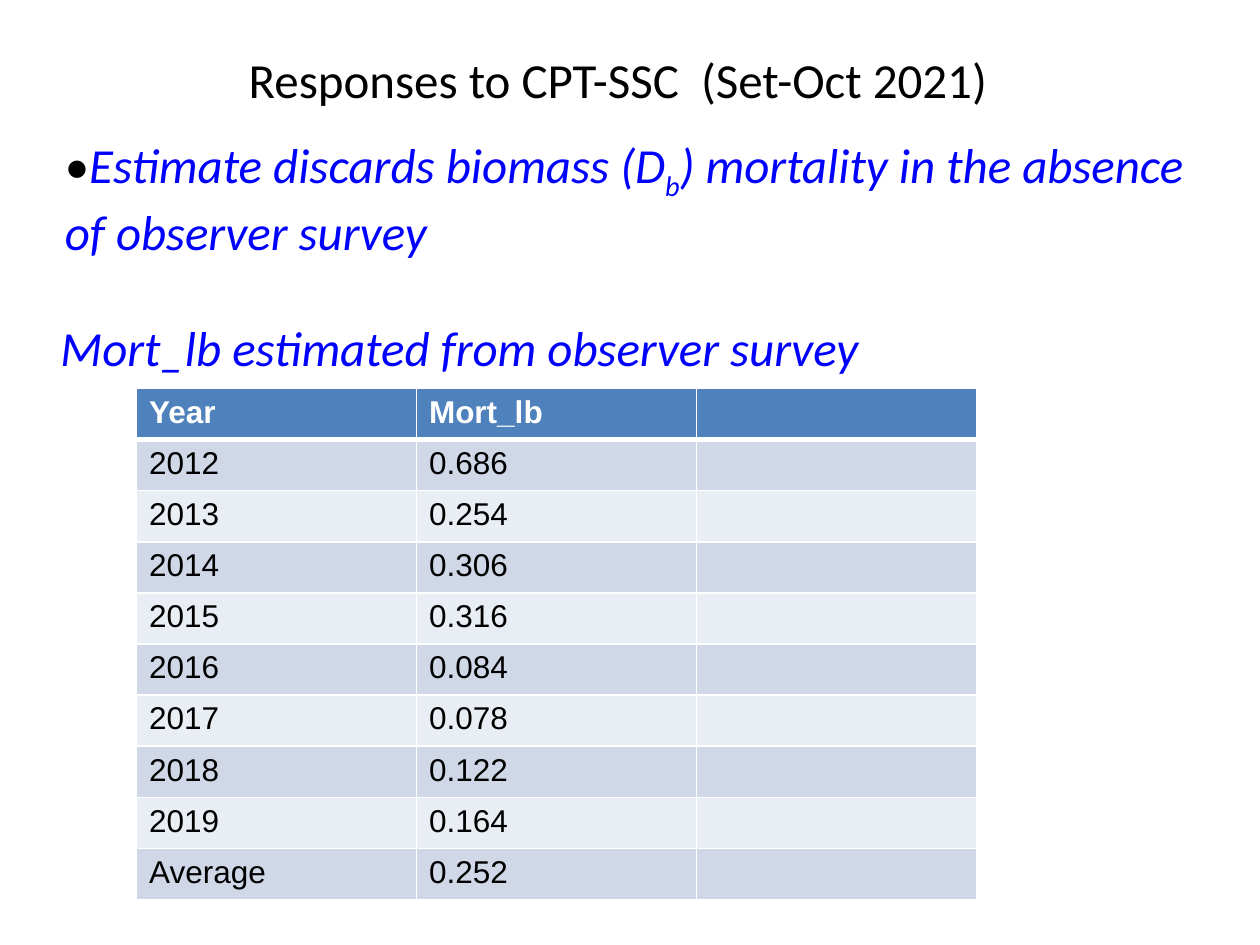
from lxml import etree
from pptx import Presentation
from pptx.dml.color import RGBColor
from pptx.enum import text
from pptx.oxml.ns import qn
from pptx.util import Pt

BLACK, WHITE, BLUE = "000000", "FFFFFF", "0000FF"
HEADER, BANDS = "4F81BD", ("D0D8E8", "E9EDF4")
ROWS = [
    ("Year", "Mort_lb", ""),
    ("2012", "0.686", ""),
    ("2013", "0.254", ""),
    ("2014", "0.306", ""),
    ("2015", "0.316", ""),
    ("2016", "0.084", ""),
    ("2017", "0.078", ""),
    ("2018", "0.122", ""),
    ("2019", "0.164", ""),
    ("Average", "0.252", ""),
]


def colour(value):
    return RGBColor.from_string(value)


def add_span(para, words, hue, size=28, face="Calibri", italic=False, bold=False):
    span = para.add_run()
    span.text = words
    font = span.font
    font.name, font.size = face, Pt(size)
    font.italic, font.bold = italic, bold
    font.color.rgb = colour(hue)
    return span


def add_title(page, box, words):
    title = page.shapes.title
    title.left, title.top, title.width, title.height = map(Pt, box)
    frame = title.text_frame
    frame.vertical_anchor = text.MSO_ANCHOR.MIDDLE
    para = frame.paragraphs[0]
    para.alignment = text.PP_ALIGN.CENTER
    add_span(para, words, BLACK)


def add_statement(page, box):
    """Add an empty wrapped text box and return its paragraph."""
    frame = page.shapes.add_textbox(*map(Pt, box)).text_frame
    frame.word_wrap = True
    para = frame.paragraphs[0]
    para.space_before = Pt(5.6)
    return para


def add_request(page, box):
    para = add_statement(page, box)
    add_span(para, "•", BLACK)
    add_span(para, "Estimate discards biomass (D", BLUE, italic=True)
    subscript = add_span(para, "b", BLUE, italic=True)
    subscript.font._element.set("baseline", "-25000")
    add_span(para, ") mortality in the absence of observer survey", BLUE, italic=True)


def add_caption(page, box, words):
    add_span(add_statement(page, box), words, BLUE, italic=True)


def set_borders(cell, widths):
    """Draw white cell borders; widths are left, right, top, bottom."""
    properties = cell._tc.get_or_add_tcPr()
    for index, (side, width) in enumerate(zip("LRTB", widths)):
        line = etree.Element(qn(f"a:ln{side}"), w=str(Pt(width)))
        fill = etree.SubElement(line, qn("a:solidFill"))
        etree.SubElement(fill, qn("a:srgbClr"), val=WHITE)
        properties.insert(index, line)


def add_mortality_table(page, box, rows):
    left, top, width, height = box
    table = page.shapes.add_table(len(rows), len(rows[0]), *map(Pt, box)).table
    for column in table.columns:
        column.width = Pt(width / len(rows[0]))
    for r, values in enumerate(rows):
        table.rows[r].height = Pt(height / len(rows))
        for c, value in enumerate(values):
            cell = table.cell(r, c)
            cell.fill.solid()
            cell.fill.fore_color.rgb = colour(BANDS[(r - 1) % 2] if r else HEADER)
            set_borders(cell, (1, 1, 3 if r == 1 else 1, 1 if r else 3))
            if value:
                add_span(cell.text_frame.paragraphs[0], value,
                         BLACK if r else WHITE, 18, "Arial", bold=r == 0)


def main():
    deck = Presentation()
    deck.slide_width, deck.slide_height = Pt(720), Pt(540)
    page = deck.slides.add_slide(deck.slide_layouts[5])

    # Heading and request
    add_title(page, (18, 18, 670, 54), "Responses to CPT-SSC  (Set-Oct 2021)")
    add_request(page, (30, 73.5, 658, 78))

    # Survey estimates
    add_mortality_table(page, (78, 222, 480, 292), ROWS)
    add_caption(page, (27.5, 178, 642, 44.5), "Mort_lb estimated from observer survey")

    deck.save("out.pptx")


if __name__ == "__main__":
    main()
